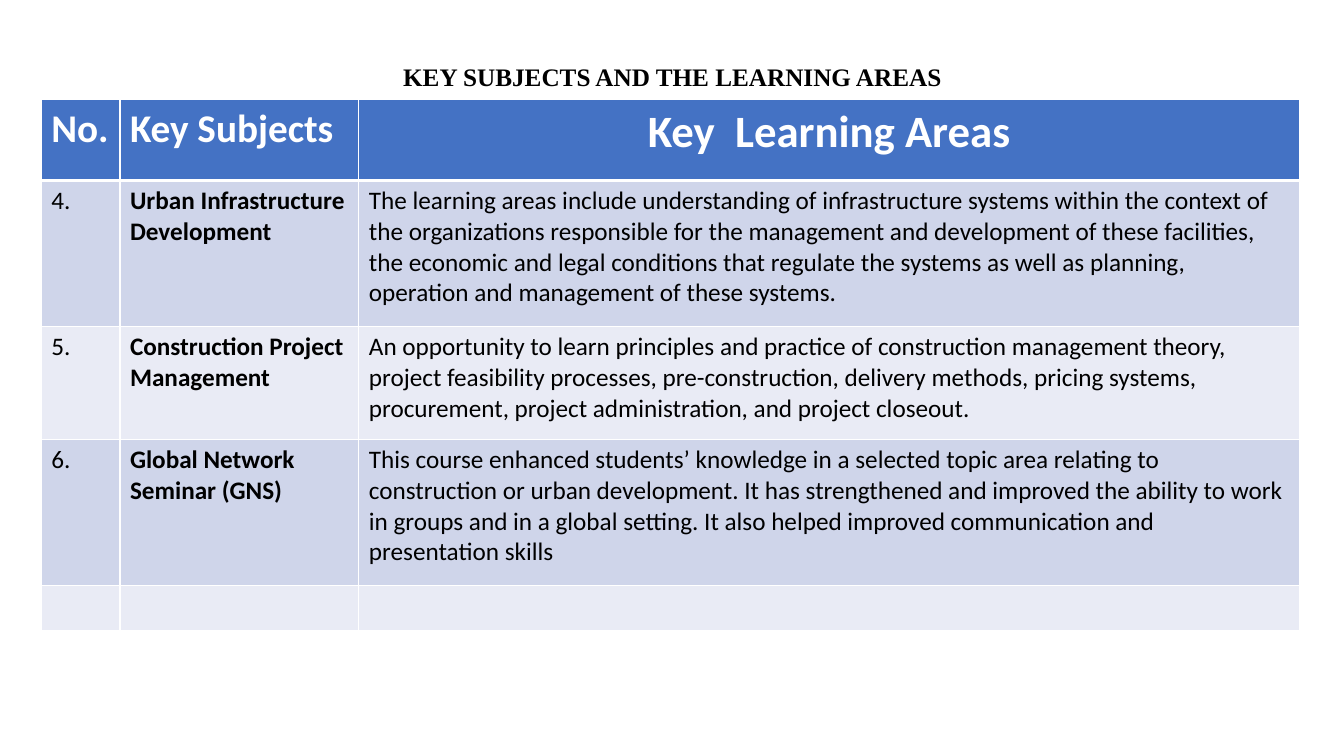
from lxml import etree
from pptx import Presentation
from pptx.dml.color import RGBColor
from pptx.enum import text
from pptx.oxml import ns
from pptx.util import Inches, Pt

TITLE = "KEY SUBJECTS AND THE LEARNING AREAS"
HEADINGS = [("No.", 28), ("Key Subjects", 28), ("Key  Learning Areas", 32)]
SUBJECTS = [
    ("4.", "Urban Infrastructure Development",
     "The learning areas include understanding of infrastructure systems within the context of "
     "the organizations responsible for the management and development of these facilities, "
     "the economic and legal conditions that regulate the systems as well as planning, "
     "operation and management of these systems."),
    ("5.", "Construction Project Management",
     "An opportunity to learn principles and practice of construction management theory, "
     "project feasibility processes, pre-construction, delivery methods, pricing systems, "
     "procurement, project administration, and project closeout."),
    ("6.", "Global Network Seminar (GNS)",
     "This course enhanced students’ knowledge in a selected topic area relating to "
     "construction or urban development. It has strengthened and improved the ability to work "
     "in groups and in a global setting. It also helped improved communication and "
     "presentation skills"),
    ("", "", ""),
]
COLUMN_WIDTHS = [0.78, 2.37, 9.33]
ROW_HEIGHTS = [0.8, 1.45, 1.12, 1.45, 0.45]
COLORS = {"white": "FFFFFF", "black": "000000", "header": "4472C4",
          "dark band": "CFD5EA", "light band": "E9EBF5"}


def add_span(para, words, size, color, bold, font="Calibri"):
    span = para.add_run()
    span.text = words
    span.font.name = font
    span.font.size = Pt(size)
    span.font.bold = bold
    span.font.color.rgb = RGBColor.from_string(COLORS[color])


def set_borders(cell, bottom):
    """Draw white 1 pt borders, with the bottom one of the given width in points."""
    properties = cell._tc.get_or_add_tcPr()
    for place, (side, width) in enumerate([("L", 1), ("R", 1), ("T", 1), ("B", bottom)]):
        line = etree.Element(ns.qn(f"a:ln{side}"), w=str(Pt(width)))
        fill = etree.SubElement(line, ns.qn("a:solidFill"))
        etree.SubElement(fill, ns.qn("a:srgbClr"), val=COLORS["white"])
        properties.insert(place, line)


def fill_cell(cell, color, bottom=1):
    cell.fill.solid()
    cell.fill.fore_color.rgb = RGBColor.from_string(COLORS[color])
    set_borders(cell, bottom)


def add_title(page):
    box = page.shapes.add_textbox(Inches(0.92), Inches(0.4), Inches(11.5), Inches(0.75))
    frame = box.text_frame
    frame.word_wrap = True
    frame.vertical_anchor = text.MSO_ANCHOR.MIDDLE
    para = frame.paragraphs[0]
    para.alignment = text.PP_ALIGN.CENTER
    para.line_spacing = 0.9
    add_span(para, TITLE, 18, "black", True, "Times New Roman")


def add_subject_table(page):
    table = page.shapes.add_table(
        len(ROW_HEIGHTS), len(COLUMN_WIDTHS), Inches(0.41), Inches(0.99),
        Inches(sum(COLUMN_WIDTHS)), Inches(sum(ROW_HEIGHTS))).table
    for column, width in zip(table.columns, COLUMN_WIDTHS):
        column.width = Inches(width)
    for row, height in zip(table.rows, ROW_HEIGHTS):
        row.height = Inches(height)

    for c, (heading, size) in enumerate(HEADINGS):
        cell = table.cell(0, c)
        fill_cell(cell, "header", bottom=3)
        add_span(cell.text_frame.paragraphs[0], heading, size, "white", True)
    table.cell(0, 2).text_frame.paragraphs[0].alignment = text.PP_ALIGN.CENTER

    for r, subject in enumerate(SUBJECTS, start=1):
        for c, words in enumerate(subject):
            cell = table.cell(r, c)
            fill_cell(cell, "dark band" if r % 2 else "light band")
            if words:
                add_span(cell.text_frame.paragraphs[0], words, 18, "black", c == 1)


def main():
    deck = Presentation()
    deck.slide_width, deck.slide_height = Inches(13.33), Inches(7.5)
    page = deck.slides.add_slide(deck.slide_layouts[6])
    add_title(page)
    add_subject_table(page)
    deck.save("out.pptx")


if __name__ == "__main__":
    main()
